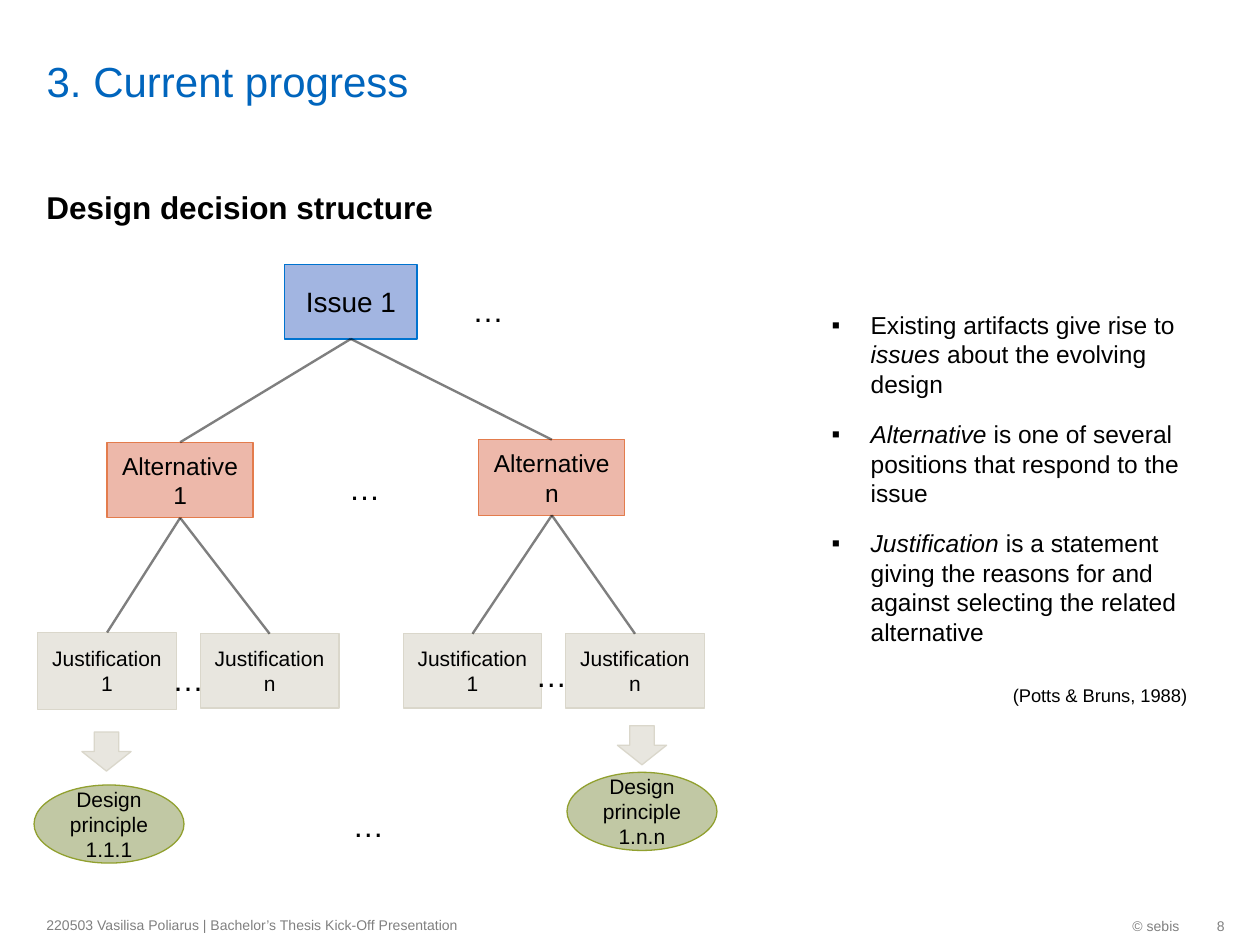
import pptx
import pptx.util
import pptx.dml.color
import pptx.enum.shapes
import pptx.enum.text
import pptx.oxml.ns
from lxml import etree

Inches, Pt = pptx.util.Inches, pptx.util.Pt
RGBColor = pptx.dml.color.RGBColor
Shape = pptx.enum.shapes.MSO_SHAPE
Align = pptx.enum.text.PP_ALIGN
Anchor = pptx.enum.text.MSO_ANCHOR
qn = pptx.oxml.ns.qn

BLACK = RGBColor(0x00, 0x00, 0x00)
GRAY = RGBColor(0x80, 0x80, 0x80)
TITLE = RGBColor(0x00, 0x65, 0xBD)
BLUE, BLUE_EDGE = RGBColor(0xA2, 0xB5, 0xE1), RGBColor(0x00, 0x73, 0xCF)
RED, RED_EDGE = RGBColor(0xED, 0xB8, 0xAA), RGBColor(0xE3, 0x7C, 0x4D)
SAND, SAND_EDGE = RGBColor(0xE8, 0xE6, 0xDF), RGBColor(0xDA, 0xD7, 0xCB)
GREEN, GREEN_EDGE = RGBColor(0xC1, 0xC8, 0xA4), RGBColor(0x91, 0xA0, 0x2F)

prs = pptx.Presentation()
prs.slide_width, prs.slide_height = Inches(10), Inches(7.5)
slide = prs.slides.add_slide(prs.slide_layouts[1])
shapes = slide.shapes


def add_run(para, text, size, color=BLACK, bold=False, italic=False):
    run = para.add_run()
    run.text = text
    font = run.font
    font.name, font.size = "Arial", Pt(size)
    font.bold, font.italic = bold, italic
    font.color.rgb = color


def add_node(kind, left, top, width, height, fill, edge, size=12, lines=()):
    """Add a filled diagram shape with one centred paragraph per line."""
    node = shapes.add_shape(kind, Inches(left), Inches(top), Inches(width), Inches(height))
    node.shadow.inherit = False
    node.fill.solid()
    node.fill.fore_color.rgb = fill
    node.line.color.rgb = edge
    node.line.width = Pt(0.75)
    frame = node.text_frame
    frame.word_wrap = True
    frame.vertical_anchor = Anchor.MIDDLE
    for i, line in enumerate(lines):
        para = frame.add_paragraph() if i else frame.paragraphs[0]
        para.alignment = Align.CENTER
        add_run(para, line, size)
    return node


# Title
title = shapes.title
title.left, title.top = Inches(0.27), Inches(0.05)
title.width, title.height = Inches(8.24), Inches(0.79)
frame = title.text_frame
frame.word_wrap = True
frame.vertical_anchor = Anchor.BOTTOM
frame.margin_top = frame.margin_bottom = 0
frame.paragraphs[0].alignment = Align.LEFT
add_run(frame.paragraphs[0], "3. Current progress", 24, TITLE)

# Decision tree
issue = add_node(Shape.RECTANGLE, 2.26, 2.1, 1.05, 0.59, BLUE, BLUE_EDGE, 16, ["Issue 1"])
links = []
for left, top, mark, leaves in [
    (0.85, 3.51, "1", [(0.3, 5.02, 0.61, "1"), (1.59, 5.03, 0.59, "n")]),
    (3.8, 3.49, "n", [(3.2, 5.03, 0.59, "1"), (4.49, 5.03, 0.59, "n")]),
]:
    option = add_node(Shape.RECTANGLE, left, top, 1.16, 0.6, RED, RED_EDGE, 14,
                      ["Alternative", mark])
    links.append((issue, option))
    for x, y, height, mark in leaves:
        reason = add_node(Shape.RECTANGLE, x, y, 1.1, height, SAND, SAND_EDGE, 12,
                          ["Justification", mark])
        links.append((option, reason))

for parent, child in links:
    link = shapes.add_connector(pptx.enum.shapes.MSO_CONNECTOR.STRAIGHT, 0, 0, 0, 0)
    link.begin_connect(parent, 2)
    link.end_connect(child, 0)
    link.line.color.rgb = BLACK
    link.line.width = Pt(1.35)
    props = link.element.spPr
    color = next(props.iter(qn("a:srgbClr")))
    etree.SubElement(color, qn("a:alpha"), val="50000")
    etree.SubElement(props, qn("a:effectLst"))

# Design principles
for left, top, mark in [(0.27, 6.23, "1.1.1"), (4.5, 6.13, "1.n.n")]:
    add_node(Shape.OVAL, left, top, 1.19, 0.62, GREEN, GREEN_EDGE, 12,
             ["Design principle", mark])
for left, top in [(0.65, 5.81), (4.9, 5.76)]:
    add_node(Shape.DOWN_ARROW, left, top, 0.39, 0.31, SAND, SAND_EDGE)

# Heading, ellipses, citation and footer
dots = [(3.65, 2.26, 0.45), (2.67, 3.67, 0.45), (1.27, 5.19, 0.25),
        (4.2, 5.16, 0.15), (2.7, 6.35, 0.25)]
labels = [(x, y, w, 0.4, "…", 18, BLACK, Align.LEFT, True) for x, y, w in dots]
labels += [
    (0.27, 1.44, 3.3, 0.4, "Design decision structure", 18, BLACK, Align.LEFT, False),
    (7.94, 5.38, 1.67, 0.29, "(Potts & Bruns, 1988)", 10.5, BLACK, Align.LEFT, False),
    (0.27, 7.18, 4.73, 0.32,
     "220503 Vasilisa Poliarus | Bachelor’s Thesis Kick-Off Presentation",
     8, GRAY, Align.LEFT, True),
    (7.7, 7.19, 1.76, 0.32, "© sebis", 8, GRAY, Align.RIGHT, True),
    (9.45, 7.19, 0.27, 0.32, "8", 8, GRAY, Align.RIGHT, True),
]
for left, top, width, height, text, size, color, align, wrap in labels:
    box = shapes.add_textbox(Inches(left), Inches(top), Inches(width), Inches(height))
    frame = box.text_frame
    frame.word_wrap = wrap
    if color == GRAY:
        frame.vertical_anchor = Anchor.MIDDLE
    if text == "8":
        frame.margin_right = 0
    para = frame.paragraphs[0]
    para.alignment = align
    add_run(para, text, size, color, bold=text.startswith("Design"))

# Definitions; the flag marks italic runs
points = [
    [("Existing artifacts give rise to ", False), ("issues ", True),
     ("about the evolving design", False)],
    [("Alternative ", True),
     ("is one of several positions that respond to the issue", False)],
    [("Justification ", True),
     ("is a statement giving the reasons for and against selecting the related alternative",
      False)],
]
body = slide.placeholders[1]
body.left, body.top = Inches(6.5), Inches(2.41)
body.width, body.height = Inches(3.15), Inches(3.03)
frame = body.text_frame
frame.word_wrap = True
for i, point in enumerate(points):
    para = frame.add_paragraph() if i else frame.paragraphs[0]
    props = para._p.get_or_add_pPr()
    props.set("marL", str(Inches(0.31)))
    props.set("indent", str(-Inches(0.31)))
    etree.SubElement(props, qn("a:buFont"), typeface="Arial")
    etree.SubElement(props, qn("a:buChar"), char="▪")
    para.space_before = Pt(0)
    para.space_after = Pt(12 if i < len(points) - 1 else 0)
    for text, italic in point:
        add_run(para, text, 14, italic=italic)

prs.save("out.pptx")
